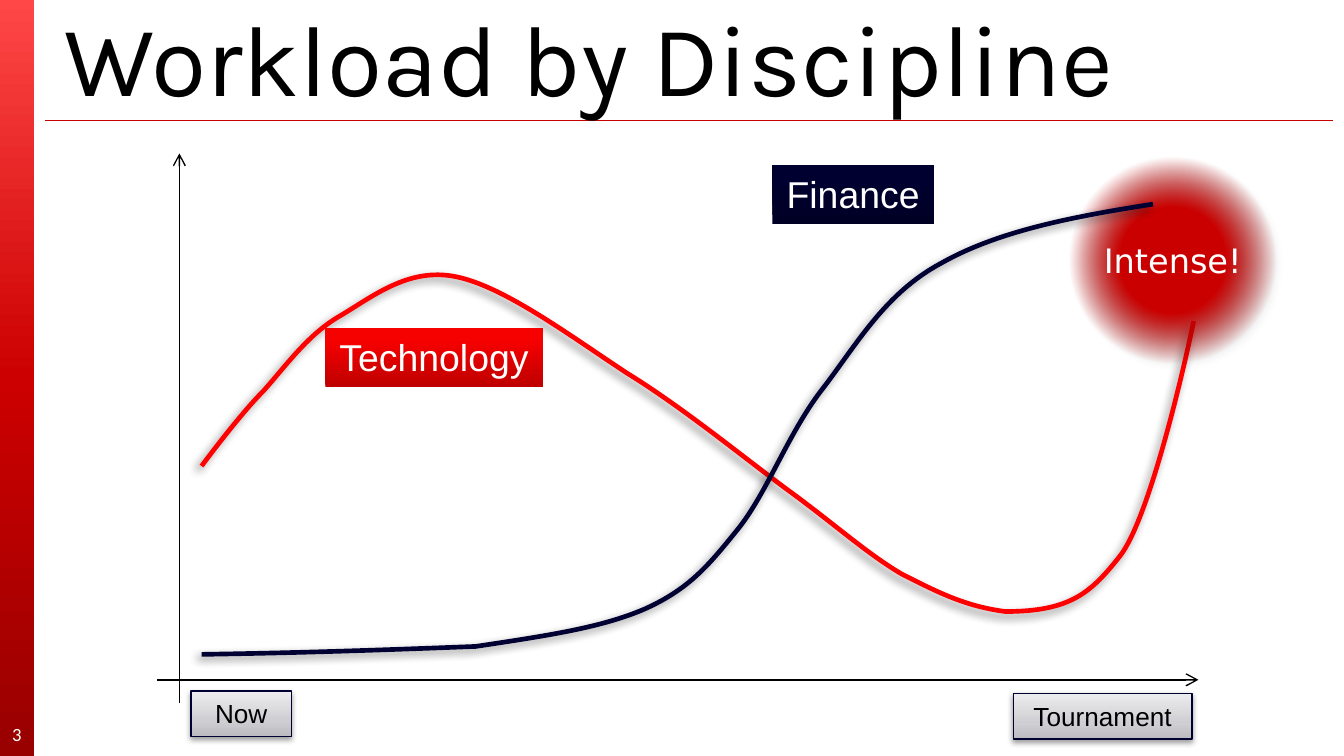
from dataclasses import dataclass
from typing import NamedTuple, Optional

from lxml.etree import SubElement
from pptx import Presentation
from pptx.dml.color import RGBColor
from pptx.enum.shapes import MSO_CONNECTOR, MSO_SHAPE
from pptx.enum.text import MSO_ANCHOR, MSO_AUTO_SIZE, PP_ALIGN
from pptx.oxml.ns import qn
from pptx.util import Cm, Pt


class Stop(NamedTuple):
    position: int
    color: str
    opacity: int = 100


class Shadow(NamedTuple):
    opacity: int
    blur: float
    distance: float
    angle: int


class Frame(NamedTuple):
    left: float
    top: float
    width: float
    height: float


@dataclass(frozen=True)
class Theme:
    black: str = "000000"
    white: str = "FFFFFF"
    rule: str = "C80000"
    technology: str = "FF0000"
    finance: str = "000032"
    border: str = "000031"
    side_bar: tuple = (Stop(0, "FF4747"), Stop(50, "CC0000"), Stop(100, "990000"))
    red_label: tuple = (Stop(0, "BE0000"), Stop(80, "F70000"), Stop(100, "F80000"))
    navy_label: tuple = (Stop(0, "000025"), Stop(80, "000030"), Stop(100, "000031"))
    gray_label: tuple = (Stop(0, "BBBBC0"), Stop(35, "CFCFD3"), Stop(100, "EDEDEF"))
    glow: tuple = (Stop(31, "CC0000"), Stop(61, "CC0000", 0))
    curve_shadow: Shadow = Shadow(45, 5, 3, 135)
    label_shadow: Shadow = Shadow(38, 3.1, 1.6, 90)
    glow_shadow: Shadow = Shadow(40, 4, 3, 45)
    title_size: int = 54
    curve_label_size: int = 20
    glow_size: int = 18
    time_label_size: int = 14
    number_size: int = 10
    thin: float = 0.75
    thick: float = 2.5


THEME = Theme()


@dataclass(frozen=True)
class Label:
    text: str
    frame: Frame
    stops: tuple
    size: int
    color: str
    bordered: bool = False


@dataclass(frozen=True)
class Curve:
    """A start point, then (control, control, end) coordinates per segment."""
    color: str
    start: tuple
    segments: tuple


TECHNOLOGY = Curve(THEME.technology, (3.81, 8.81), (
    (3.81, 8.81, 4.52, 7.85, 4.98, 7.39),
    (5.41, 6.91, 5.82, 6.32, 6.43, 5.97),
    (7.04, 5.61, 7.72, 5.05, 8.61, 5.23),
    (9.53, 5.41, 10.82, 6.38, 11.86, 7.06),
    (12.93, 7.72, 14.07, 8.66, 14.94, 9.3),
    (15.8, 9.93, 16.38, 10.46, 17.04, 10.85),
    (17.73, 11.2, 18.24, 11.46, 19, 11.56),
    (20.24, 11.56, 20.62, 11.2, 21.16, 10.52),
    (21.69, 9.86, 22.33, 7.19, 22.56, 6.07),
))
FINANCE = Curve(THEME.finance, (3.81, 12.37), (
    (5.72, 12.34, 7.16, 12.29, 8.99, 12.22),
    (10.39, 12.01, 11.38, 11.86, 12.19, 11.51),
    (13.03, 11.13, 13.39, 10.69, 13.94, 10.01),
    (14.5, 9.32, 14.91, 8.15, 15.57, 7.32),
    (16.21, 6.48, 16.74, 5.54, 17.78, 4.98),
    (18.82, 4.39, 20.17, 4.11, 21.79, 3.86),
))
LABELS = (
    Label("Technology", Frame(6.15, 6.2, 4.11, 1.12), THEME.red_label,
          THEME.curve_label_size, THEME.white),
    Label("Finance", Frame(14.6, 3.12, 3.05, 1.12), THEME.navy_label,
          THEME.curve_label_size, THEME.white),
    Label("Now", Frame(3.61, 13.06, 1.9, 0.86), THEME.gray_label,
          THEME.time_label_size, THEME.black, True),
    Label("Tournament", Frame(19.15, 13.11, 3.38, 0.86), THEME.gray_label,
          THEME.time_label_size, THEME.black, True),
)


def add_color(parent, color: str, opacity: int) -> None:
    node = SubElement(parent, qn("a:srgbClr"), val=color)
    if opacity < 100:
        SubElement(node, qn("a:alpha"), val=str(opacity * 1000))


def set_gradient(shape, stops: tuple, angle: Optional[int]) -> None:
    """Fill with the stops; without an angle they run outward from the centre."""
    shape.fill.gradient()
    gradient = shape._element.spPr.find(qn("a:gradFill"))
    for child in list(gradient):
        gradient.remove(child)
    stop_list = SubElement(gradient, qn("a:gsLst"))
    for stop in stops:
        node = SubElement(stop_list, qn("a:gs"), pos=str(stop.position * 1000))
        add_color(node, stop.color, stop.opacity)
    if angle is None:
        circle = SubElement(gradient, qn("a:path"), path="circle")
        SubElement(circle, qn("a:fillToRect"), l="50000", t="50000", r="50000", b="50000")
    else:
        SubElement(gradient, qn("a:lin"), ang=str(angle * 60000), scaled="0")


def set_shadow(shape, shadow: Shadow) -> None:
    shape.shadow.inherit = False
    effects = shape._element.spPr.find(qn("a:effectLst"))
    outer = SubElement(effects, qn("a:outerShdw"), blurRad=str(Pt(shadow.blur)),
                       dist=str(Pt(shadow.distance)), dir=str(shadow.angle * 60000),
                       rotWithShape="0")
    add_color(outer, THEME.black, shadow.opacity)


def set_line(item, color: str, width: float) -> None:
    item.line.color.rgb = RGBColor.from_string(color)
    item.line.width = Pt(width)


def write(shape, text: str, font: str, size: int, color: str,
          align=PP_ALIGN.CENTER, anchor=MSO_ANCHOR.MIDDLE) -> None:
    frame = shape.text_frame
    frame.text = text
    frame.vertical_anchor = anchor
    para = frame.paragraphs[0]
    para.alignment = align
    span = para.runs[0]
    span.font.name = font
    span.font.size = Pt(size)
    span.font.color.rgb = RGBColor.from_string(color)


def add_filled(page, kind, frame: Frame, stops: tuple, angle: Optional[int]):
    shape = page.shapes.add_shape(kind, *map(Cm, frame))
    shape.shadow.inherit = False
    shape.line.fill.background()
    set_gradient(shape, stops, angle)
    return shape


def add_line(page, start: tuple, end: tuple, color: str, arrow: bool = False) -> None:
    line = page.shapes.add_connector(MSO_CONNECTOR.STRAIGHT, *map(Cm, start + end))
    set_line(line, color, THEME.thin)
    if arrow:
        SubElement(line.line._get_or_add_ln(), qn("a:tailEnd"), type="arrow")
    SubElement(line._element.spPr, qn("a:effectLst"))


def add_label(page, label: Label) -> None:
    box = add_filled(page, MSO_SHAPE.RECTANGLE, label.frame, label.stops, 270)
    if label.bordered:
        set_line(box, THEME.border, THEME.thin)
        set_shadow(box, THEME.label_shadow)
    write(box, label.text, "Arial", label.size, label.color, anchor=MSO_ANCHOR.TOP)
    box.text_frame.word_wrap = label.bordered
    box.text_frame.auto_size = MSO_AUTO_SIZE.SHAPE_TO_FIT_TEXT


def add_curve(page, curve: Curve) -> None:
    """Join the end points, then bend each straight segment with its controls."""
    builder = page.shapes.build_freeform(*map(Cm, curve.start))
    builder.add_line_segments([tuple(map(Cm, part[4:])) for part in curve.segments], close=False)
    shape = builder.convert_to_shape()
    straight = list(shape._element.spPr.iter(qn("a:lnTo")))
    for node, part in zip(straight, curve.segments):
        bend = SubElement(node.getparent(), qn("a:cubicBezTo"))
        for x, y in (part[:2], part[2:4], part[4:]):
            SubElement(bend, qn("a:pt"), x=str(Cm(x) - shape.left), y=str(Cm(y) - shape.top))
        node.getparent().replace(node, bend)
    shape.fill.background()
    set_line(shape, curve.color, THEME.thick)
    set_shadow(shape, THEME.curve_shadow)


def add_text(page, frame: Frame, inset: float, *style, **layout) -> None:
    box = page.shapes.add_textbox(*map(Cm, frame))
    text = box.text_frame
    text.word_wrap = True
    text.margin_left = text.margin_right = Cm(inset)
    text.margin_top = text.margin_bottom = Cm(inset / 2)
    write(box, *style, **layout)


def main() -> None:
    deck = Presentation()
    deck.slide_width, deck.slide_height = Cm(25.4), Cm(14.29)
    page = deck.slides.add_slide(deck.slide_layouts[6])
    add_filled(page, MSO_SHAPE.RECTANGLE, Frame(0, 0, 0.64, 14.29), THEME.side_bar, 90)
    add_line(page, (0.85, 2.28), (25.2, 2.28), THEME.rule)
    add_text(page, Frame(0.97, 0.38, 24.33, 1.35), 0.25, "Workload by Discipline",
             "Karla", THEME.title_size, THEME.black, align=PP_ALIGN.LEFT)
    add_text(page, Frame(0, 13.49, 0.64, 0.76), 0, "3", "Calibri", THEME.number_size, THEME.white)
    add_line(page, (2.97, 12.85), (22.65, 12.85), THEME.black, arrow=True)
    add_line(page, (3.39, 13.28), (3.39, 2.9), THEME.black, arrow=True)
    add_curve(page, TECHNOLOGY)
    for label in LABELS:
        add_label(page, label)
    glow = add_filled(page, MSO_SHAPE.OVAL, Frame(19.84, 2.69, 4.65, 4.45), THEME.glow, None)
    set_shadow(glow, THEME.glow_shadow)
    write(glow, "Intense!", "DejaVu Sans", THEME.glow_size, THEME.white)
    add_curve(page, FINANCE)
    deck.save("out.pptx")


if __name__ == "__main__":
    main()
